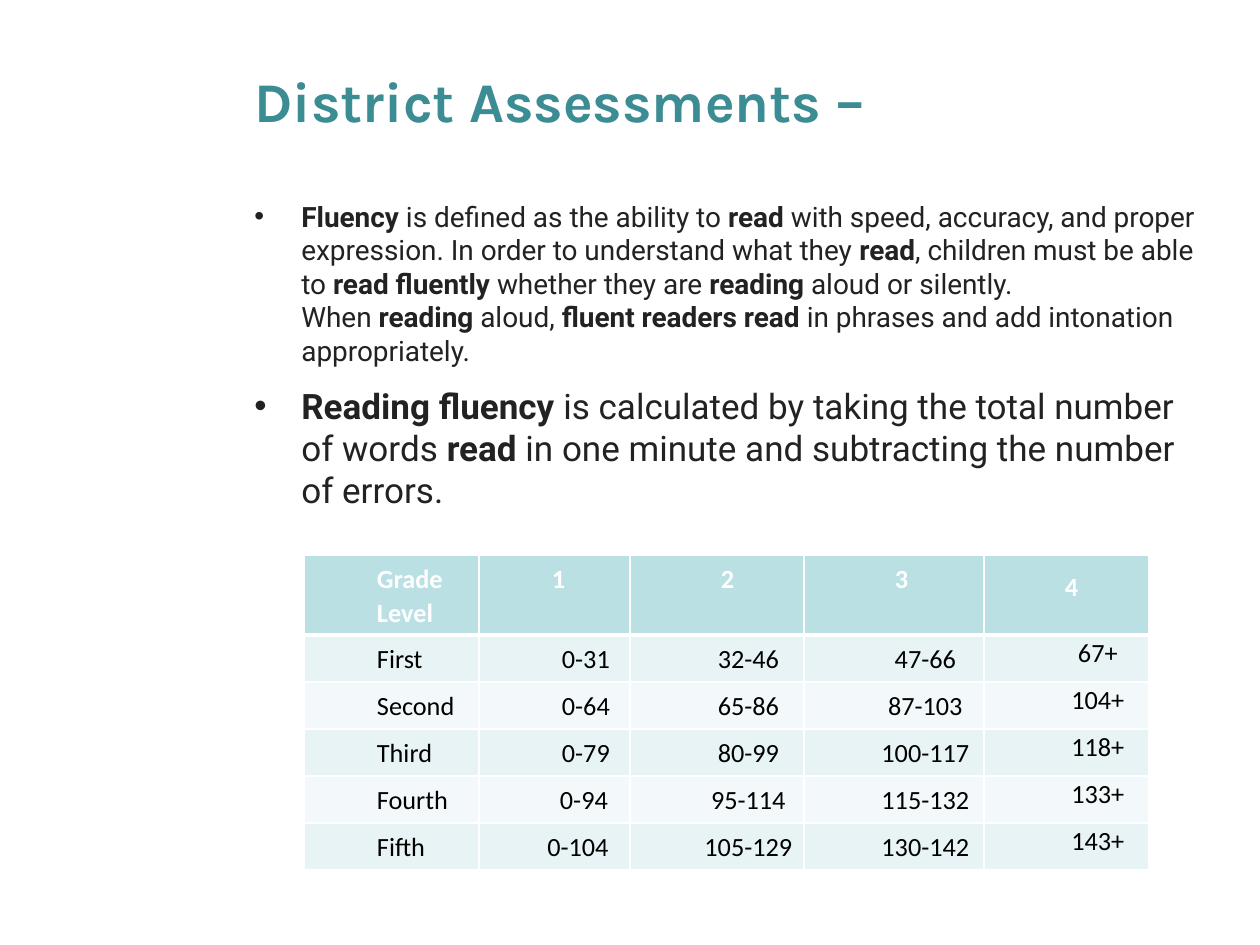
"""Build the District Assessments slide on reading fluency."""
from dataclasses import dataclass

from lxml.etree import SubElement
from pptx import Presentation
from pptx.dml.color import RGBColor
from pptx.enum.text import MSO_ANCHOR, MSO_AUTO_SIZE, PP_ALIGN
from pptx.oxml.ns import qn
from pptx.util import Emu, Pt

TEAL = RGBColor(0x3C, 0x8C, 0x93)
INK = RGBColor(0x22, 0x22, 0x22)
BLACK = RGBColor(0, 0, 0)
WHITE = RGBColor(0xFF, 0xFF, 0xFF)
HEADER = RGBColor(0xBB, 0xE0, 0xE3)
BANDS = (RGBColor(0xE7, 0xF3, 0xF4), RGBColor(0xF3, 0xF9, 0xFA))
NBSP = chr(160)
HANG = 47
INDENT = 63


@dataclass(frozen=True)
class Box:
    left: int
    top: int
    width: int
    height: int


@dataclass(frozen=True)
class Bullet:
    size: int
    before: int
    phrases: tuple[str, ...]


@dataclass(frozen=True)
class CellStyle:
    fill: RGBColor
    color: RGBColor
    bold: bool
    align: PP_ALIGN
    indent: int
    spacing: float
    inset: tuple[int, int]
    after: int
    top: int
    bottom: int


TITLE_BOX = Box(242, 42, 966, 116)
BODY_BOX = Box(242, 193, 966, 362)
TABLE_BOX = Box(304, 555, 845, 315)
COLUMNS = (175, 151, 174, 180, 165)
ROW_HEIGHTS = (80, 47, 47, 47, 47, 47)
BULLETS = (
    Bullet(16, 0, (
        "Fluency", " is defined as the ability to ",
        "read", " with speed, accuracy, and proper expression. "
        "In order to understand what they ",
        "read", ", children must be able to ",
        "read fluently", " whether they are ",
        "reading", " aloud or silently. When ",
        "reading", " aloud, ",
        "fluent readers read", " in phrases and add intonation appropriately.",
    )),
    Bullet(20, 10, (
        "Reading fluency", " is calculated by taking the total number of words ",
        "read", " in one minute and subtracting the number of errors.",
    )),
)
SCORES = (
    ("Grade Level", "1", "2", "3", "4"),
    ("First", "0-31", "32-46", "47-66", "67+"),
    ("Second", "0-64", "65-86", "87-103", "104+"),
    ("Third", "0-79", "80-99", "100-117", "118+"),
    ("Fourth", "0-94", "95-114", "115-132", "133+"),
    ("Fifth", "0-104", "105-129", "130-142", "143+"),
)
HEADER_INDENTS = (63, 63, 81, 81, 81)
SPECIAL_INDENTS = {(4, 1): 59, (5, 1): 47}


def px(n: int) -> Emu:
    """Turn pixels into EMU."""
    return Emu(round(n * 914400 / 126))


def place(box: Box) -> tuple[Emu, Emu, Emu, Emu]:
    """Return the box in EMU."""
    return px(box.left), px(box.top), px(box.width), px(box.height)


def add_run(p, text: str, font: str, size: int, color: RGBColor, bold: bool) -> None:
    """Add one formatted run to a paragraph."""
    r = p.add_run()
    r.text = text
    r.font.name, r.font.size, r.font.bold = font, Pt(size), bold
    r.font.color.rgb = color


def glue(text: str) -> str:
    """Make the outer spaces of a run non-breaking."""
    return NBSP * text.startswith(" ") + text.strip() + NBSP * text.endswith(" ")


def set_title(s, text: str) -> None:
    """Place and format the title placeholder."""
    sp = s.shapes.title
    sp.left, sp.top, sp.width, sp.height = place(TITLE_BOX)
    tf = sp.text_frame
    tf.auto_size = MSO_AUTO_SIZE.NONE
    tf.vertical_anchor = MSO_ANCHOR.MIDDLE
    p = tf.paragraphs[0]
    p.alignment = PP_ALIGN.LEFT
    add_run(p, text, "Karla", 32, TEAL, True)


def add_bullets(s, bullets: tuple[Bullet, ...]) -> None:
    """Add the bulleted text, whose runs alternate bold and regular."""
    tf = s.shapes.add_textbox(*place(BODY_BOX)).text_frame
    tf.word_wrap = True
    for i, bullet in enumerate(bullets):
        p = tf.add_paragraph() if i else tf.paragraphs[0]
        pPr = p._p.get_or_add_pPr()
        pPr.set("marL", str(px(HANG)))
        pPr.set("indent", str(-px(HANG)))
        SubElement(pPr, qn("a:buFont")).set("typeface", "Arial")
        SubElement(pPr, qn("a:buChar")).set("char", "•")
        if bullet.before:
            p.space_before = Pt(bullet.before)
        for j, phrase in enumerate(bullet.phrases):
            add_run(p, glue(phrase), "Roboto", bullet.size, INK, j % 2 == 0)


def cell_style(row: int, col: int) -> CellStyle:
    """Work out the style of a cell from its place in the table."""
    head, last = row == 0, col == len(COLUMNS) - 1
    return CellStyle(
        fill=HEADER if head else BANDS[(row - 1) % 2],
        color=WHITE if head else BLACK,
        bold=head,
        align=PP_ALIGN.LEFT if head or col == 0 else PP_ALIGN.CENTER,
        indent=HEADER_INDENTS[col] if head else SPECIAL_INDENTS.get((row, col), INDENT),
        spacing=1.5 if head and last else 1.07,
        inset=(0, 0) if last else (10, 6),
        after=8 if last else 0,
        top=3 if row == 1 else 1,
        bottom=3 if head else 1,
    )


def set_border(tcPr, side: str, width: int) -> None:
    """Add one white cell border."""
    ln = SubElement(tcPr, qn(f"a:ln{side}"), w=str(Pt(width)))
    SubElement(SubElement(ln, qn("a:solidFill")), qn("a:srgbClr"), val=str(WHITE))


def fill_cell(cell, text: str, style: CellStyle) -> None:
    """Write and format one table cell."""
    cell.margin_left = cell.margin_right = px(style.inset[0])
    cell.margin_top = cell.margin_bottom = px(style.inset[1])
    tcPr = cell._tc.get_or_add_tcPr()
    for side, width in (("L", 1), ("R", 1), ("T", style.top), ("B", style.bottom)):
        set_border(tcPr, side, width)
    cell.fill.solid()
    cell.fill.fore_color.rgb = style.fill
    p = cell.text_frame.paragraphs[0]
    p.alignment = style.align
    p.line_spacing = style.spacing
    p.space_after = Pt(style.after)
    p._p.get_or_add_pPr().set("marL", str(px(style.indent)))
    add_run(p, text, "Calibri", 15, style.color, style.bold)


def add_scores(s) -> None:
    """Add the table of score ranges by grade level."""
    table = s.shapes.add_table(len(SCORES), len(COLUMNS), *place(TABLE_BOX)).table
    for column, width in zip(table.columns, COLUMNS):
        column.width = px(width)
    for i, (row, height) in enumerate(zip(table.rows, ROW_HEIGHTS)):
        row.height = px(height)
        for j, cell in enumerate(row.cells):
            fill_cell(cell, SCORES[i][j], cell_style(i, j))


def main() -> None:
    """Build and save the slide."""
    prs = Presentation()
    prs.slide_width, prs.slide_height = px(1260), px(945)
    s = prs.slides.add_slide(prs.slide_layouts[5])
    set_title(s, "District Assessments –")
    add_bullets(s, BULLETS)
    add_scores(s)
    prs.save("out.pptx")


if __name__ == "__main__":
    main()
